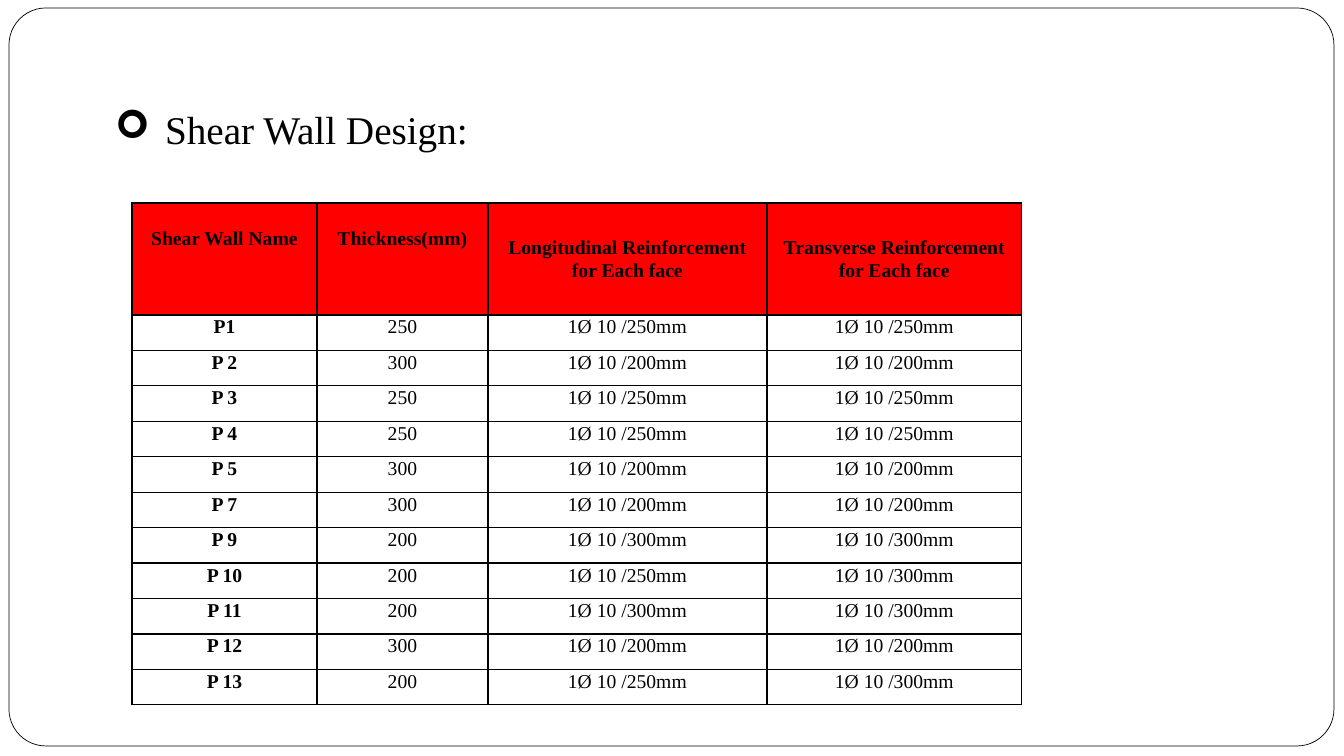
from lxml import etree
from pptx import Presentation
from pptx.dml.color import RGBColor
from pptx.enum.shapes import MSO_SHAPE
from pptx.enum.text import MSO_ANCHOR, MSO_AUTO_SIZE, PP_ALIGN
from pptx.oxml.ns import qn
from pptx.util import Pt

BLACK = RGBColor(0x00, 0x00, 0x00)
WHITE = RGBColor(0xFF, 0xFF, 0xFF)
RED = RGBColor(0xFF, 0x00, 0x00)
ROUNDED = MSO_SHAPE.ROUNDED_RECTANGLE
TOP, MIDDLE = MSO_ANCHOR.TOP, MSO_ANCHOR.MIDDLE
LEFT, CENTER = PP_ALIGN.LEFT, PP_ALIGN.CENTER
NO_AUTOFIT = MSO_AUTO_SIZE.NONE
TITLE_ONLY = 5
EMU_PER_PX = 914400 / 100.8

HEADERS = [
    ("Shear Wall Name", TOP, 24),
    ("Thickness(mm)", TOP, 24),
    ("Longitudinal Reinforcement for Each face", MIDDLE, 0),
    ("Transverse Reinforcement\nfor Each face", MIDDLE, 0),
]
WALLS = [
    ("P1", 250, 250, 250),
    ("P 2", 300, 200, 200),
    ("P 3", 250, 250, 250),
    ("P 4", 250, 250, 250),
    ("P 5", 300, 200, 200),
    ("P 7", 300, 200, 200),
    ("P 9", 200, 300, 300),
    ("P 10", 200, 250, 300),
    ("P 11", 200, 300, 300),
    ("P 12", 300, 200, 200),
    ("P 13", 200, 250, 300),
]
COLUMN_WIDTHS = [185, 171, 279, 255]
HEADER_HEIGHT = 112
BODY_HEIGHT = 390


def px(length):
    return round(length * EMU_PER_PX)


class SlideBuilder:
    font_name = "Times New Roman"

    def __init__(self, slide):
        self.slide = slide

    def style(self, paragraph, size, bold=False, align=CENTER, spacing=1.07):
        paragraph.alignment = align
        paragraph.line_spacing = spacing
        paragraph.font.name = self.font_name
        paragraph.font.size = Pt(size)
        paragraph.font.bold = bold
        paragraph.font.color.rgb = BLACK

    def frame(self, left, top, width, height):
        border = self.slide.shapes.add_shape(
            ROUNDED, px(left), px(top), px(width), px(height))
        border.adjustments[0] = 0.05
        border.shadow.inherit = False
        border.fill.solid()
        border.fill.fore_color.rgb = WHITE
        border.line.color.rgb = BLACK
        border.line.width = Pt(0.5)
        self.slide.shapes.title.element.addprevious(border.element)

    def heading(self, text, left, top, width, height):
        title = self.slide.shapes.title
        title.left, title.top = px(left), px(top)
        title.width, title.height = px(width), px(height)
        text_frame = title.text_frame
        text_frame.text = text
        text_frame.word_wrap = True
        text_frame.auto_size = NO_AUTOFIT
        text_frame.vertical_anchor = TOP
        paragraph = text_frame.paragraphs[0]
        self.style(paragraph, 28, align=LEFT, spacing=1.5)
        paragraph.space_before = Pt(12)
        paragraph.space_after = Pt(6)
        properties = paragraph._p.get_or_add_pPr()
        properties.set("marL", str(px(101)))
        properties.set("indent", str(px(-50)))
        etree.SubElement(properties, qn("a:buFont"), typeface="Wingdings")
        etree.SubElement(properties, qn("a:buChar"), char="➢")

    def cell(self, cell, text, fill, bold, anchor=TOP, top_margin=0):
        cell.text = text
        cell.vertical_anchor = anchor
        cell.margin_left = cell.margin_right = px(7)
        cell.margin_top, cell.margin_bottom = px(top_margin), 0
        for paragraph in cell.text_frame.paragraphs:
            self.style(paragraph, 14, bold)
        properties = cell._tc.get_or_add_tcPr()
        for side in ("a:lnL", "a:lnR", "a:lnT", "a:lnB"):
            edge = etree.SubElement(properties, qn(side), w=str(Pt(1)))
            paint = etree.SubElement(edge, qn("a:solidFill"))
            etree.SubElement(paint, qn("a:srgbClr"), val=str(BLACK))
        cell.fill.solid()
        cell.fill.fore_color.rgb = fill

    def wall_table(self, left, top):
        table = self.slide.shapes.add_table(
            len(WALLS) + 1, len(HEADERS), px(left), px(top),
            px(sum(COLUMN_WIDTHS)), px(HEADER_HEIGHT + BODY_HEIGHT)).table
        table.horz_banding = False
        for column, width in zip(table.columns, COLUMN_WIDTHS):
            column.width = px(width)
        for row in table.rows:
            row.height = px(BODY_HEIGHT) // len(WALLS)
        table.rows[0].height = px(HEADER_HEIGHT)
        for column, (label, anchor, top_margin) in enumerate(HEADERS):
            self.cell(table.cell(0, column), label, RED, True, anchor, top_margin)
        for row, (wall, thickness, *bar_spacings) in enumerate(WALLS, start=1):
            bars = [f"1Ø 10 /{spacing}mm" for spacing in bar_spacings]
            for column, value in enumerate([wall, str(thickness), *bars]):
                self.cell(table.cell(row, column), value, WHITE, column == 0)


def main():
    presentation = Presentation()
    presentation.slide_width, presentation.slide_height = px(1344), px(756)
    slide = presentation.slides.add_slide(presentation.slide_layouts[TITLE_ONLY])
    builder = SlideBuilder(slide)
    builder.frame(9, 8, 1325, 738)
    builder.heading("Shear Wall Design:", 54, 77, 431, 73)
    builder.wall_table(132, 203)
    presentation.save("out.pptx")


if __name__ == "__main__":
    main()
